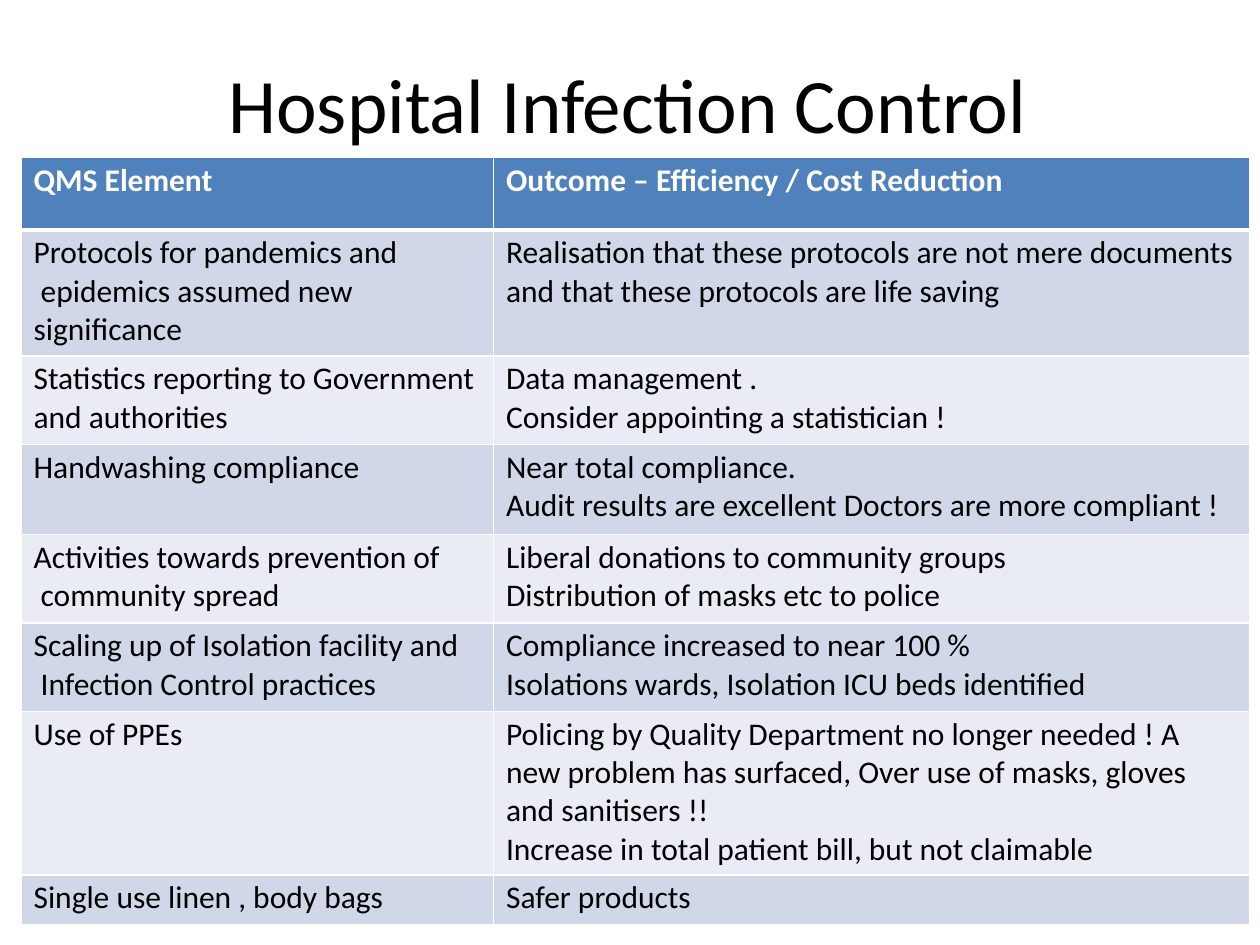
"""Build the Hospital Infection Control slide."""
from dataclasses import dataclass

from lxml.etree import SubElement
from pptx import Presentation
from pptx.dml.color import RGBColor as Rgb
from pptx.enum.text import MSO_ANCHOR as Anchor, PP_ALIGN as Align
from pptx.oxml.ns import qn
from pptx.util import Pt


@dataclass(frozen=True)
class Theme:
    font: str = "Calibri"
    ink: str = "000000"
    white: str = "FFFFFF"
    head: str = "4F81BC"
    bands: tuple = ("D0D7E8", "E9ECF4")
    title: float = 44
    body: float = 18
    thin: float = 1
    thick: float = 3


@dataclass(frozen=True)
class Row:
    tall: float
    left: str
    right: str


THEME = Theme()
COLS = (270, 432)
ROWS = (
    Row(41.5, "QMS Element", "Outcome – Efficiency / Cost Reduction"),
    Row(72, "Protocols for pandemics and\v epidemics assumed new significance",
        "Realisation that these protocols are not mere documents\n"
        "and that these protocols are life saving"),
    Row(50.5, "Statistics reporting to Government\vand authorities",
        "Data management .\nConsider appointing a statistician !"),
    Row(51.5, "Handwashing compliance",
        "Near total compliance.\n"
        "Audit results are excellent Doctors are more compliant !"),
    Row(50.5, "Activities towards prevention of\v community spread",
        "Liberal donations to community groups\v"
        "Distribution of masks etc to police"),
    Row(50.5, "Scaling up of Isolation facility and\v Infection Control practices",
        "Compliance increased to near 100 %\v"
        "Isolations wards, Isolation ICU beds identified"),
    Row(93.5, "Use of PPEs",
        "Policing by Quality Department no longer needed ! A\v"
        "new problem has surfaced, Over use of masks, gloves\v"
        "and sanitisers !!\n"
        "Increase in total patient bill, but not claimable"),
    Row(28.5, "Single use linen , body bags", "Safer products"),
)


def style(para, size: float, color: str, bold: bool = False) -> None:
    """Set the font of a paragraph."""
    font = para.font
    font.name, font.size, font.bold = THEME.font, Pt(size), bold
    font.color.rgb = Rgb.from_string(color)


def edge(cell, side: str, width: float) -> None:
    """Add one white border to a cell that has no fill yet."""
    props = cell._tc.get_or_add_tcPr()
    line = SubElement(props, qn(f"a:ln{side}"), w=str(Pt(width)))
    fill = SubElement(line, qn("a:solidFill"))
    SubElement(fill, qn("a:srgbClr"), val=THEME.white)


def draw_cell(cell, text: str, row: int) -> None:
    """Write and format one table cell."""
    head = row == 0
    cell.text = text
    cell.margin_left, cell.margin_top = Pt(7.2), Pt(2.2)
    cell.margin_right = cell.margin_bottom = 0
    for num, para in enumerate(cell.text_frame.paragraphs):
        para.space_before = Pt(0 if num else 2.5)
        style(para, THEME.body, THEME.white if head else THEME.ink, head)
    for side in "LRTB":
        heavy = (row, side) in ((0, "B"), (1, "T"))
        edge(cell, side, THEME.thick if heavy else THEME.thin)
    cell.fill.solid()
    color = THEME.head if head else THEME.bands[(row - 1) % 2]
    cell.fill.fore_color.rgb = Rgb.from_string(color)


def draw_title(shape, text: str) -> None:
    """Place and format the slide title."""
    shape.left, shape.top = Pt(130.5), Pt(31.5)
    shape.width, shape.height = Pt(459.5), Pt(54.5)
    frame = shape.text_frame
    frame.text = text
    frame.margin_left = frame.margin_right = frame.margin_bottom = 0
    frame.margin_top = Pt(1)
    frame.vertical_anchor = Anchor.TOP
    para = frame.paragraphs[0]
    para.alignment, para.space_before = Align.LEFT, Pt(1)
    style(para, THEME.title, THEME.ink)


def draw_table(slide) -> None:
    """Draw the table of elements and outcomes."""
    tall = sum(row.tall for row in ROWS)
    table = slide.shapes.add_table(
        len(ROWS), len(COLS), Pt(12), Pt(90), Pt(sum(COLS)), Pt(tall)).table
    for col, width in zip(table.columns, COLS):
        col.width = Pt(width)
    for num, row in enumerate(ROWS):
        table.rows[num].height = Pt(row.tall)
        for col, text in enumerate((row.left, row.right)):
            draw_cell(table.cell(num, col), text, num)


def main() -> None:
    """Build and save the deck."""
    deck = Presentation()
    deck.slide_width, deck.slide_height = Pt(720), Pt(540)
    slide = deck.slides.add_slide(deck.slide_layouts[5])
    draw_title(slide.shapes.title, "Hospital Infection Control")
    draw_table(slide)
    deck.save("out.pptx")


if __name__ == "__main__":
    main()
